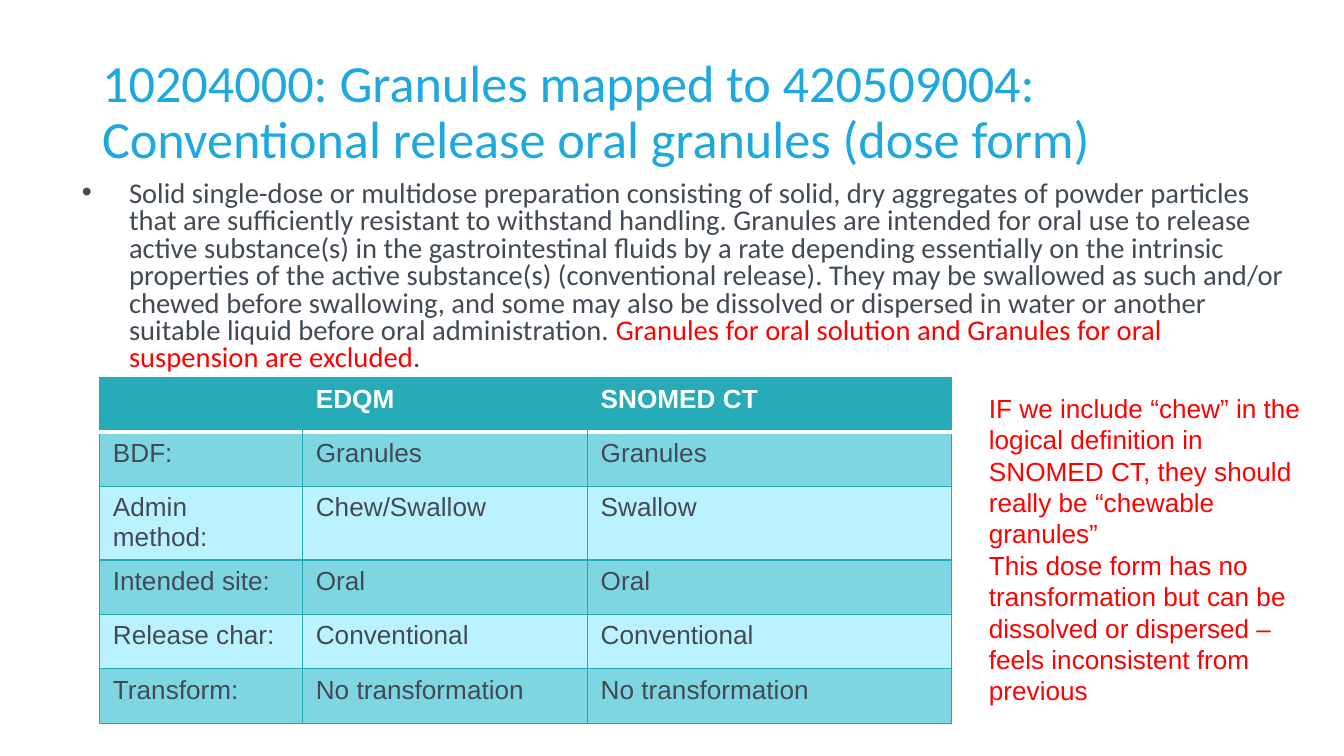
from lxml import etree
from pptx import Presentation
from pptx.dml.color import RGBColor
from pptx.enum.text import MSO_ANCHOR
from pptx.oxml.ns import qn
from pptx.util import Inches, Pt

MIDDLE, TOP = MSO_ANCHOR.MIDDLE, MSO_ANCHOR.TOP
BLUE, SLATE, RED, WHITE = "1DA8DE", "424A55", "FF0000", "FFFFFF"
HEADER, BORDER, DARK_BAND, LIGHT_BAND = "27ABB8", "23AAB7", "7FD6E3", "BAF2FF"

TITLE = "10204000: Granules mapped to 420509004: Conventional release oral granules (dose form)"
DEFINITION = [
    ("Solid single-dose or multidose preparation consisting of solid, dry aggregates of powder "
     "particles that are sufficiently resistant to withstand handling. Granules are intended for "
     "oral use to release active substance(s) in the gastrointestinal fluids by a rate depending "
     "essentially on the intrinsic properties of the active substance(s) (conventional release). "
     "They may be swallowed as such and/or chewed before swallowing, and some may also be "
     "dissolved or dispersed in water or another suitable liquid before oral administration. ",
     SLATE),
    ("Granules for oral solution and Granules for oral suspension are excluded", RED),
    (".", SLATE),
]
COMPARISON = [
    ("", "EDQM", "SNOMED CT"),
    ("BDF:", "Granules", "Granules"),
    ("Admin method:", "Chew/Swallow", "Swallow"),
    ("Intended site:", "Oral", "Oral"),
    ("Release char:", "Conventional", "Conventional"),
    ("Transform:", "No transformation", "No transformation"),
]
COMMENTS = [
    "IF we include “chew” in the logical definition in SNOMED CT, they should really be "
    "“chewable granules”",
    "This dose form has no transformation but can be dissolved or dispersed – feels "
    "inconsistent from previous",
]


def rgb(color):
    return RGBColor.from_string(color)


def add_run(p, text, size=14, font="Arial", color=SLATE, bold=False):
    r = p.add_run()
    r.text = text
    r.font.size = Pt(size)
    r.font.name = font
    r.font.bold = bold
    r.font.color.rgb = rgb(color)


def add_box(s, box, anchor=TOP, inset=(0.07, 0.04)):
    tf = s.shapes.add_textbox(*map(Inches, box)).text_frame
    tf.word_wrap = True
    tf.vertical_anchor = anchor
    tf.margin_left = tf.margin_right = Inches(inset[0])
    tf.margin_top = tf.margin_bottom = Inches(inset[1])
    return tf


def add_bullet(p, color, margin, indent):
    pPr = p._p.get_or_add_pPr()
    pPr.set("marL", str(Inches(margin)))
    pPr.set("indent", str(Inches(indent)))
    clr = etree.SubElement(pPr, qn("a:buClr"))
    etree.SubElement(clr, qn("a:srgbClr"), val=color)
    etree.SubElement(pPr, qn("a:buFont"), typeface="Arial")
    etree.SubElement(pPr, qn("a:buChar"), char="•")


def set_border(cell, side, color, width=0.75):
    """Draw one side (L, R, T or B) of a cell; no colour means no line."""
    tcPr = cell._tc.get_or_add_tcPr()
    ln = etree.SubElement(tcPr, qn(f"a:ln{side}"), w=str(Pt(width)))
    if color:
        fill = etree.SubElement(ln, qn("a:solidFill"))
        etree.SubElement(fill, qn("a:srgbClr"), val=color)
    else:
        etree.SubElement(ln, qn("a:noFill"))


def title(s, box):
    p = add_box(s, box, MIDDLE).paragraphs[0]
    p.line_spacing = 0.9
    add_run(p, TITLE, size=28, font="Calibri", color=BLUE)


def definition(s, box):
    p = add_box(s, box).paragraphs[0]
    p.line_spacing = 0.8
    add_bullet(p, SLATE, 0.5, -0.35)
    for text, color in DEFINITION:
        add_run(p, text, size=15.3, font="Calibri", color=color)


def style_cell(cell, row, col, last_col):
    is_header = row == 0
    set_border(cell, "L", None if is_header and col > 0 else BORDER)
    set_border(cell, "R", None if is_header and col < last_col else BORDER)
    set_border(cell, "T", *((WHITE, 2) if row == 1 else (BORDER,)))
    set_border(cell, "B", *((WHITE, 2) if is_header else (BORDER,)))
    cell.margin_bottom = Inches(0.03)
    cell.fill.solid()
    band = DARK_BAND if row % 2 else LIGHT_BAND
    cell.fill.fore_color.rgb = rgb(HEADER if is_header else band)


def comparison_table(s, box, col_widths):
    n_rows, n_cols = len(COMPARISON), len(col_widths)
    table = s.shapes.add_table(n_rows, n_cols, *map(Inches, box)).table
    table.horz_banding = False
    for column, width in zip(table.columns, col_widths):
        column.width = Inches(width)
    for i, texts in enumerate(COMPARISON):
        for j, text in enumerate(texts):
            cell = table.cell(i, j)
            style_cell(cell, i, j, n_cols - 1)
            if text:
                add_run(cell.text_frame.paragraphs[0], text,
                        color=SLATE if i else WHITE, bold=i == 0)


def comments(s, box):
    tf = add_box(s, box, inset=(0.1, 0.05))
    for i, text in enumerate(COMMENTS):
        p = tf.add_paragraph() if i else tf.paragraphs[0]
        add_run(p, text, color=RED)


def main():
    prs = Presentation()
    prs.slide_width = Inches(10)
    prs.slide_height = prs.slide_width * 9 // 16
    s = prs.slides.add_slide(prs.slide_layouts[6])
    title(s, (0.69, 0.3, 8.62, 1.09))
    definition(s, (0.39, 1.31, 9.34, 1.39))
    comparison_table(s, (0.74, 2.81, 6.34, 2.43), (1.51, 2.12, 2.71))
    comments(s, (7.26, 2.87, 2.57, 2.46))
    prs.save("out.pptx")


if __name__ == "__main__":
    main()
